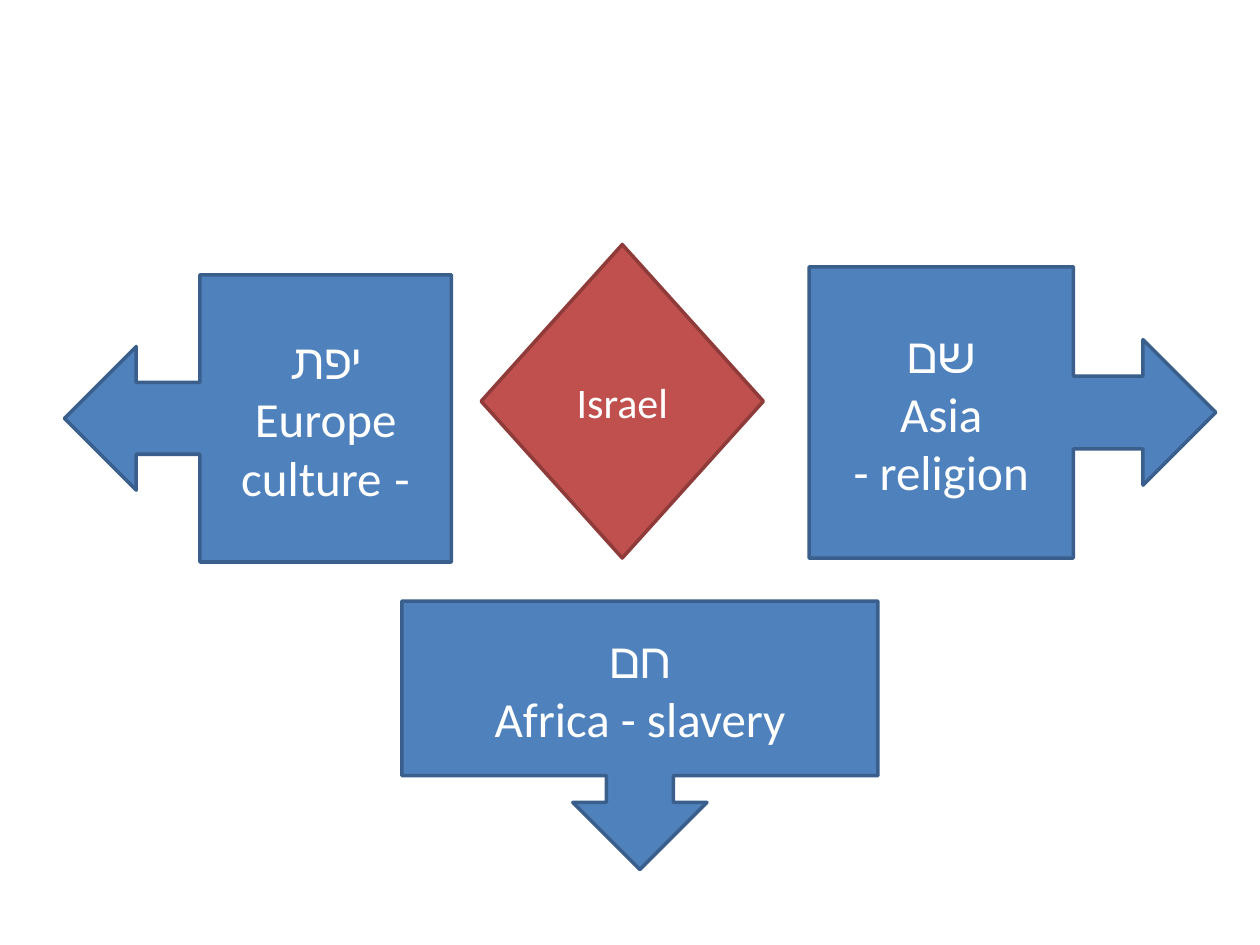
from pptx import Presentation
from pptx import util as u
from pptx.dml.color import RGBColor
from pptx.enum import shapes, text

HUES = {
    "blue": "4F81BD", "navy": "3A5F8C",
    "red": "C0504D", "wine": "8E3B39",
    "white": "FFFFFF",
}
KIND = shapes.MSO_SHAPE


def hue(name):
    return RGBColor.from_string(HUES[name])


def block(slide, kind, box, lines, size, fill, edge, rtl=True):
    """Place one filled shape with centred lines of text in box (cm)."""
    shape = slide.shapes.add_shape(kind, *(u.Cm(n) for n in box))
    shape.shadow.inherit = False
    shape.fill.solid()
    shape.fill.fore_color.rgb = hue(fill)
    shape.line.color.rgb = hue(edge)
    shape.line.width = u.Pt(2)

    frame = shape.text_frame
    frame.word_wrap = True
    frame.vertical_anchor = text.MSO_ANCHOR.MIDDLE
    frame.text = "\n".join(lines)
    for para in frame.paragraphs:
        para.alignment = text.PP_ALIGN.CENTER
        para.font.name = "Calibri"
        para.font.size = u.Pt(size)
        para.font.color.rgb = hue("white")
        if rtl:
            para._p.get_or_add_pPr().set("rtl", "1")


def centre(slide, box):
    block(slide, KIND.DIAMOND, box, ["Israel"], 24, "red", "wine")


def region(slide, kind, box, lines, rtl=True):
    block(slide, kind, box, lines, 28, "blue", "navy", rtl)


def main():
    deck = Presentation()
    deck.slide_width, deck.slide_height = u.Cm(25.4), u.Cm(19.05)
    slide = deck.slides.add_slide(deck.slide_layouts[6])

    # Diamond in the middle
    centre(slide, (9.7, 4.93, 5.69, 6.32))

    # Callouts pointing south, west and east
    region(slide, KIND.DOWN_ARROW_CALLOUT, (8.1, 12.12, 9.6, 5.41),
           ["חם", "Africa - slavery"])
    region(slide, KIND.LEFT_ARROW_CALLOUT, (1.3, 5.54, 7.8, 5.79),
           ["יפת", "Europe", "- culture"])
    region(slide, KIND.RIGHT_ARROW_CALLOUT, (16.31, 5.38, 8.2, 5.87),
           ["שם", "Asia", "- religion"], rtl=False)

    deck.save("out.pptx")


if __name__ == "__main__":
    main()
